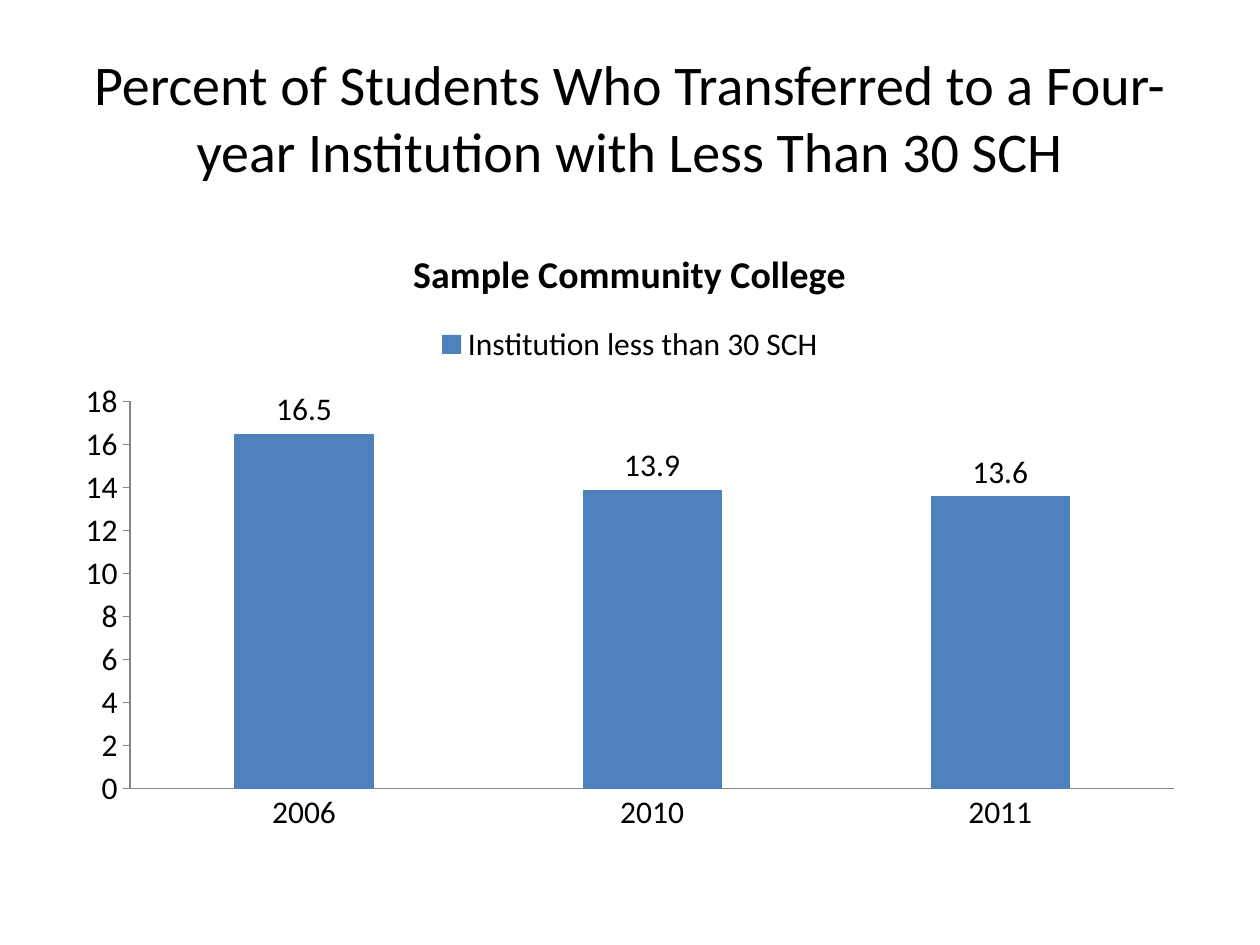
from dataclasses import dataclass

from pptx import Presentation
from pptx.chart.data import CategoryChartData
from pptx.dml.color import RGBColor
from pptx.enum.chart import (XL_CHART_TYPE, XL_LABEL_POSITION,
                             XL_LEGEND_POSITION, XL_TICK_MARK)
from pptx.enum.text import MSO_ANCHOR, PP_ALIGN
from pptx.util import Cm, Pt


@dataclass(frozen=True)
class Theme:
    font: str = "Calibri"
    text: RGBColor = RGBColor(0, 0, 0)
    bar: RGBColor = RGBColor(0x4F, 0x81, 0xBD)
    axis: RGBColor = RGBColor(0x86, 0x86, 0x86)
    heading_size: Pt = Pt(32)
    college_size: Pt = Pt(21.6)
    chart_size: Pt = Pt(18)


THEME = Theme()
MARGIN = Cm(1.27)
CONTENT_WIDTH = Cm(22.86)


def style_font(font, size, bold=False):
    font.name = THEME.font
    font.size = size
    font.bold = bold
    font.color.rgb = THEME.text


def add_heading(slide, wording):
    heading = slide.shapes.add_textbox(MARGIN, Cm(0.76), CONTENT_WIDTH, Cm(3.18))
    frame = heading.text_frame
    frame.word_wrap = True
    frame.vertical_anchor = MSO_ANCHOR.MIDDLE
    frame.text = wording
    line = frame.paragraphs[0]
    line.alignment = PP_ALIGN.CENTER
    style_font(line.runs[0].font, THEME.heading_size)


def style_axis(axis, tick_mark):
    axis.has_major_gridlines = False
    axis.major_tick_mark = tick_mark
    axis.minor_tick_mark = XL_TICK_MARK.NONE
    axis.format.line.color.rgb = THEME.axis
    axis.format.line.width = Pt(0.75)


def add_transfer_chart(slide, college, measure, percent_by_year):
    transfers = CategoryChartData(number_format="General")
    transfers.categories = list(percent_by_year)
    transfers.add_series(measure, list(percent_by_year.values()))
    chart = slide.shapes.add_chart(
        XL_CHART_TYPE.COLUMN_CLUSTERED,
        MARGIN, Cm(4.45), CONTENT_WIDTH, Cm(12.57), transfers,
    ).chart
    style_font(chart.font, THEME.chart_size)

    chart.has_title = True
    chart.chart_title.include_in_layout = False
    college_frame = chart.chart_title.text_frame
    college_frame.text = college
    style_font(college_frame.paragraphs[0].runs[0].font, THEME.college_size, bold=True)

    chart.has_legend = True
    chart.legend.position = XL_LEGEND_POSITION.TOP
    chart.legend.include_in_layout = False

    style_axis(chart.category_axis, XL_TICK_MARK.NONE)
    style_axis(chart.value_axis, XL_TICK_MARK.OUTSIDE)
    chart.value_axis.minimum_scale = 0
    chart.value_axis.maximum_scale = 18
    chart.value_axis.major_unit = 2

    columns = chart.plots[0]
    columns.gap_width = 150
    columns.overlap = -25
    columns.vary_by_categories = False
    percents = columns.series[0]
    percents.format.fill.solid()
    percents.format.fill.fore_color.rgb = THEME.bar
    percents.data_labels.show_value = True
    percents.data_labels.position = XL_LABEL_POSITION.OUTSIDE_END


def main():
    deck = Presentation()
    deck.slide_width, deck.slide_height = Cm(25.4), Cm(19.05)
    slide = deck.slides.add_slide(deck.slide_layouts[6])
    add_heading(slide, "Percent of Students Who Transferred to a Four-year "
                       "Institution with Less Than 30 SCH")
    add_transfer_chart(slide, "Sample Community College",
                       "Institution less than 30 SCH",
                       {"2006": 16.5, "2010": 13.9, "2011": 13.6})
    deck.save("out.pptx")


if __name__ == "__main__":
    main()
